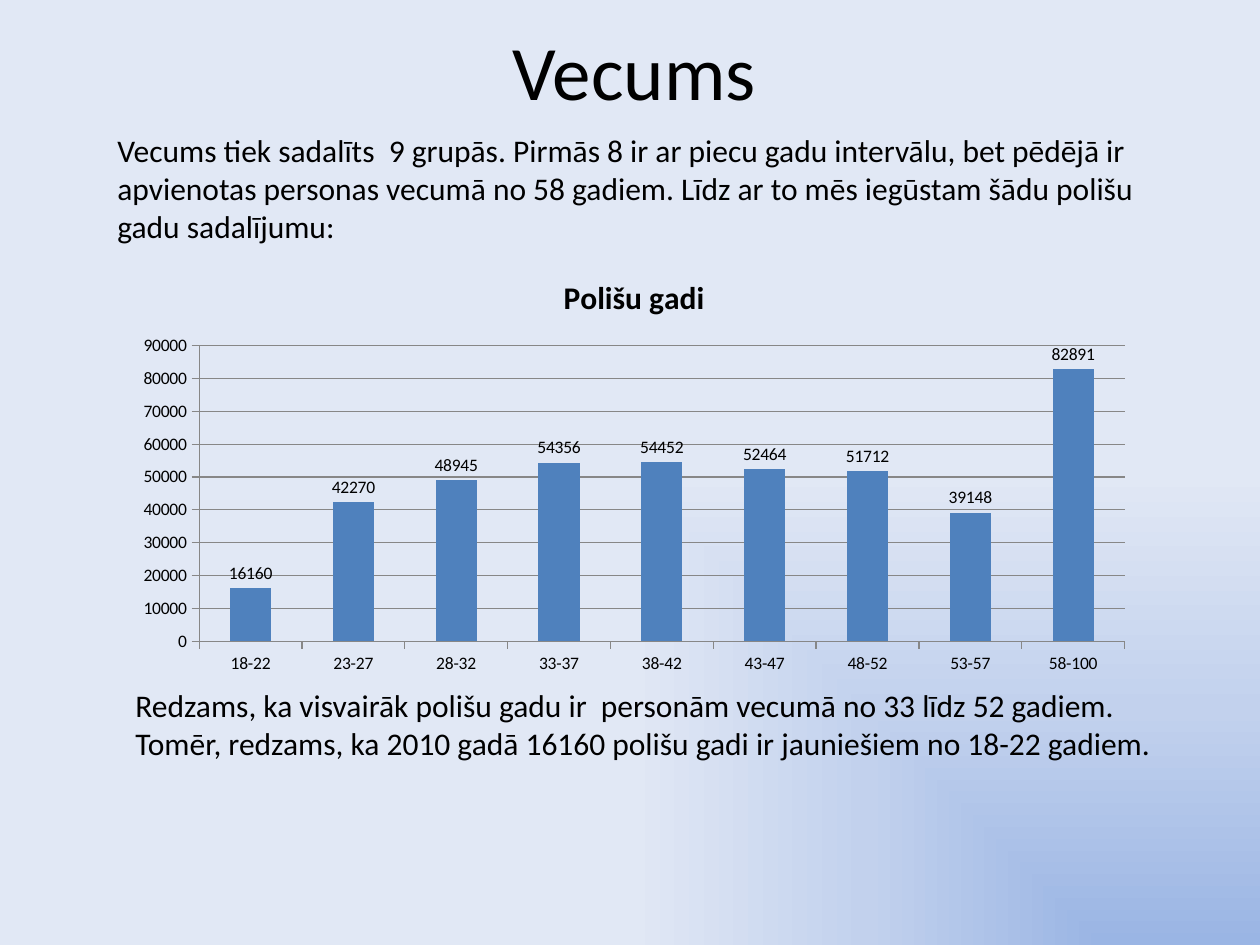
from pptx import Presentation
from pptx.chart.data import CategoryChartData
from pptx.dml.color import RGBColor
from pptx.enum.chart import XL_CHART_TYPE, XL_LABEL_POSITION, XL_TICK_MARK
from pptx.enum.text import MSO_ANCHOR, MSO_AUTO_SIZE, PP_ALIGN
from pptx.oxml import parse_xml
from pptx.oxml.ns import nsdecls, qn
from pptx.util import Emu, Pt

COLUMNS = XL_CHART_TYPE.COLUMN_CLUSTERED
OUTSIDE_END = XL_LABEL_POSITION.OUTSIDE_END
TICK_OUTSIDE = XL_TICK_MARK.OUTSIDE
MIDDLE = MSO_ANCHOR.MIDDLE
GROW = MSO_AUTO_SIZE.SHAPE_TO_FIT_TEXT
CENTER, LEFT = PP_ALIGN.CENTER, PP_ALIGN.LEFT

EMU_PER_PX = 914400 / 126
FONT = "Calibri"
COLORS = {
    "text": "000000",
    "bar": "4F81BD",
    "axis": "878787",
    "corner": "9AB5E4",
    "between": "C2D1ED",
    "far": "E1E8F5",
}
BACKGROUND_STOPS = {0: "corner", 50: "between", 100: "far"}

INTRO = (
    "Vecums tiek sadalīts  9 grupās. Pirmās 8 ir ar piecu gadu intervālu, "
    "bet pēdējā ir apvienotas personas vecumā no 58 gadiem. "
    "Līdz ar to mēs iegūstam šādu polišu gadu sadalījumu:"
)
CLOSING = (
    "Redzams, ka visvairāk polišu gadu ir  personām vecumā no 33 līdz 52 gadiem. "
    "Tomēr, redzams, ka 2010 gadā 16160 polišu gadi ir jauniešiem no 18-22 gadiem."
)
CHART_TITLE = "Polišu gadi"
POLICY_YEARS = {
    "18-22": 16160,
    "23-27": 42270,
    "28-32": 48945,
    "33-37": 54356,
    "38-42": 54452,
    "43-47": 52464,
    "48-52": 51712,
    "53-57": 39148,
    "58-100": 82891,
}


def px(length):
    return Emu(round(length * EMU_PER_PX))


def color(name):
    return RGBColor.from_string(COLORS[name])


def set_values(target, values):
    for name, value in values.items():
        setattr(target, name, value)


def set_font(font, size, bold=False):
    set_values(font, {"name": FONT, "size": Pt(size), "bold": bold})
    font.color.rgb = color("text")


def set_line(line):
    line.width = Pt(0.75)
    line.color.rgb = color("axis")


def write_text(frame, text, size, align):
    para = frame.paragraphs[0]
    para.alignment = align
    span = para.add_run()
    span.text = text
    set_font(span.font, size)


def paint_background(page):
    page.background.fill.gradient()
    gradient = page.element.find(".//" + qn("a:gradFill"))
    stops = "".join(
        f'<a:gs pos="{position * 1000}"><a:srgbClr val="{COLORS[name]}"/></a:gs>'
        for position, name in BACKGROUND_STOPS.items()
    )
    gradient.getparent().replace(gradient, parse_xml(
        f'<a:gradFill {nsdecls("a")} rotWithShape="1"><a:gsLst>{stops}</a:gsLst>'
        '<a:path path="rect"><a:fillToRect l="100000" t="100000"/></a:path>'
        '</a:gradFill>'
    ))


def fill_title(page, text, left, top, width, height):
    title = page.shapes.title
    set_values(title, {
        "left": px(left), "top": px(top), "width": px(width), "height": px(height),
    })
    title.text_frame.vertical_anchor = MIDDLE
    write_text(title.text_frame, text, 44, CENTER)


def add_text(page, text, left, top, width, height):
    box = page.shapes.add_textbox(px(left), px(top), px(width), px(height))
    set_values(box.text_frame, {"word_wrap": True, "auto_size": GROW})
    write_text(box.text_frame, text, 18, LEFT)


def format_axes(chart):
    for axis in (chart.category_axis, chart.value_axis):
        axis.major_tick_mark = TICK_OUTSIDE
        set_line(axis.format.line)
    set_values(chart.value_axis, {
        "minimum_scale": 0,
        "maximum_scale": 90000,
        "major_unit": 10000,
        "has_major_gridlines": True,
    })
    set_values(chart.value_axis.tick_labels, {
        "number_format": "0", "number_format_is_linked": False,
    })
    set_line(chart.value_axis.major_gridlines.format.line)


def format_columns(plot):
    set_values(plot, {
        "gap_width": 150, "vary_by_categories": False, "has_data_labels": True,
    })
    set_values(plot.data_labels, {
        "show_value": True,
        "position": OUTSIDE_END,
        "number_format": "0",
        "number_format_is_linked": False,
    })
    set_font(plot.data_labels.font, 10)
    fill = plot.series[0].format.fill
    fill.solid()
    fill.fore_color.rgb = color("bar")


def add_column_chart(page, left, top, width, height):
    data = CategoryChartData(number_format="0")
    data.categories = list(POLICY_YEARS)
    data.add_series(CHART_TITLE, list(POLICY_YEARS.values()))
    chart = page.shapes.add_chart(
        COLUMNS, px(left), px(top), px(width), px(height), data
    ).chart
    set_font(chart.font, 10)
    set_values(chart, {"has_legend": False, "has_title": True})
    chart.chart_title.include_in_layout = False
    title_frame = chart.chart_title.text_frame
    title_frame.text = CHART_TITLE
    set_font(title_frame.paragraphs[0].runs[0].font, 18, bold=True)
    format_axes(chart)
    format_columns(chart.plots[0])


def main():
    deck = Presentation()
    set_values(deck, {"slide_width": px(1260), "slide_height": px(945)})
    page = deck.slides.add_slide(deck.slide_layouts.get_by_name("Title Only"))
    paint_background(page)
    fill_title(page, "Vecums", 94, 0, 1081, 140)
    add_text(page, INTRO, 105, 125, 1081, 127)
    add_column_chart(page, 123, 255, 1022, 427)
    add_text(page, CLOSING, 123, 680, 1081, 89)
    deck.save("out.pptx")


if __name__ == "__main__":
    main()
